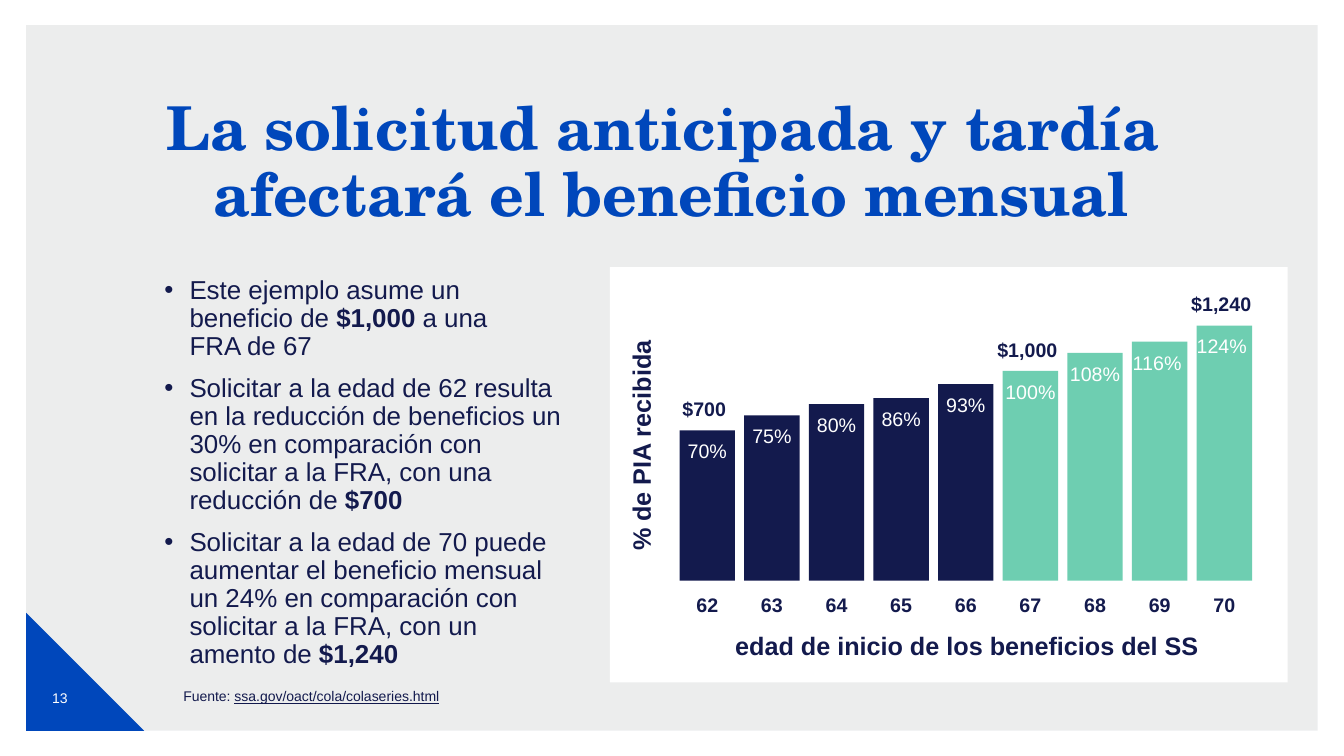
from lxml.etree import SubElement
from pptx import Presentation
from pptx.dml.color import RGBColor
from pptx.enum.shapes import MSO_SHAPE
from pptx.enum.text import MSO_ANCHOR, PP_ALIGN
from pptx.oxml.ns import qn
from pptx.util import Emu, Pt

PX = 9144  # 100 px to the inch
NAVY, BLUE, MINT, WHITE, GREY = "131A4D", "0047BB", "6ECEB1", "FFFFFF", "D0D3D4"
BODY_FONT, TITLE_FONT = "Arial", "TeX Gyre Schola"

# age, percent of the full benefit, bar height in px
BARS = [
    (62, 70, 149), (63, 75, 164), (64, 80, 175), (65, 86, 181), (66, 93, 195),
    (67, 100, 208), (68, 108, 226), (69, 116, 237), (70, 124, 253),
]
FULL_AGE = 67
AMOUNTS = {62: "$700", 67: "$1,000", 70: "$1,240"}

BULLETS = [
    [("Este ejemplo asume un beneficio de ", False), ("$1,000 ", True), ("a una \nFRA de 67", False)],
    [("Solicitar a la edad de 62 resulta en la reducción de beneficios un 30% en "
      "comparación con solicitar a la FRA, con una reducción de ", False), ("$700", True)],
    [("Solicitar a la edad de 70 puede aumentar el beneficio mensual un 24% en "
      "comparación con solicitar a la FRA, con un amento de ", False), ("$1,240", True)],
]


def px(*lengths):
    return [Emu(round(length * PX)) for length in lengths]


def color(value):
    return RGBColor.from_string(value)


def add_block(page, kind, box, fill, opacity=None):
    block = page.shapes.add_shape(kind, *px(*box))
    block.shadow.inherit = False
    block.fill.solid()
    block.fill.fore_color.rgb = color(fill)
    block.line.fill.background()
    if opacity:
        tint = block.fill._xPr.find(qn("a:solidFill"))[0]
        SubElement(tint, qn("a:alpha")).set("val", str(opacity * 1000))


def add_span(para, words, size, shade=NAVY, bold=False, font=BODY_FONT, underline=None):
    """Add the words as a run for each line, with line breaks between."""
    for index, line in enumerate(words.split("\n")):
        if index:
            para.add_line_break()
        span = para.add_run()
        span.text = line
        span.font.size = Pt(size)
        span.font.name = font
        span.font.bold = bold
        span.font.underline = underline
        span.font.color.rgb = color(shade)


def add_frame(page, box, anchor=MSO_ANCHOR.TOP, side=10, edge=5):
    """Add a wrapping text box and return it with its first paragraph."""
    holder = page.shapes.add_textbox(*px(*box))
    frame = holder.text_frame
    frame.word_wrap = True
    frame.vertical_anchor = anchor
    frame.margin_left, frame.margin_right = px(side, side)
    frame.margin_top, frame.margin_bottom = px(edge, edge)
    return holder, frame.paragraphs[0]


def add_label(page, box, words, size, shade=NAVY, bold=True, **frame_options):
    holder, para = add_frame(page, box, **frame_options)
    para.alignment = PP_ALIGN.CENTER
    add_span(para, words, size, shade, bold)
    return holder


def add_backdrop(page, box):
    left, top, width, height = box
    corner = 117
    bottom = top + height
    add_block(page, MSO_SHAPE.RECTANGLE, box, GREY, opacity=40)
    add_block(page, MSO_SHAPE.RIGHT_TRIANGLE, (left, bottom - corner, corner, corner), BLUE)
    add_label(page, (left + 6, bottom - 62, 55, 58), "13", 10, WHITE, False, anchor=MSO_ANCHOR.MIDDLE)


def add_title(page, box):
    para = add_frame(page, box, side=0)[1]
    para.alignment = PP_ALIGN.CENTER
    para.line_spacing = 0.9
    add_span(para, "La solicitud anticipada y tardía \nafectará el beneficio mensual",
             43.2, BLUE, True, TITLE_FONT)


def add_bullets(page, box):
    holder, para = add_frame(page, box, side=0)
    for index, spans in enumerate(BULLETS):
        if index:
            para = holder.text_frame.add_paragraph()
        para.line_spacing = 0.9
        para.space_before = Pt(10)
        properties = para._p.get_or_add_pPr()
        properties.set("marL", str(25 * PX))
        properties.set("indent", str(-25 * PX))
        SubElement(properties, qn("a:buFont")).set("typeface", BODY_FONT)
        SubElement(properties, qn("a:buChar")).set("char", "•")
        for words, bold in spans:
            add_span(para, words, 18.5, bold=bold)


def add_bar(page, box, age, percent):
    """Add one bar with its percent inside, its age below and any amount above."""
    left, top, width, height = box
    add_block(page, MSO_SHAPE.RECTANGLE, box, MINT if age >= FULL_AGE else NAVY)
    percent_width = 50 if percent > 110 else width
    add_label(page, (left, top + 8, percent_width, 24), f"{percent}%", 14, WHITE, False,
              anchor=MSO_ANCHOR.BOTTOM, side=0, edge=0)
    add_label(page, (left, top + height + 7, width, 34), str(age), 14)
    if age in AMOUNTS:
        add_label(page, (left + width / 2 - 48, top - 38, 90, 34), AMOUNTS[age], 14)


def add_bar_panel(page, box):
    left, top, width, height = box
    pitch, bar_width = 64.1, 55
    base = top + 311
    add_block(page, MSO_SHAPE.RECTANGLE, box, WHITE)
    for index, (age, percent, bar_height) in enumerate(BARS):
        bar_left = left + 69 + index * pitch
        add_bar(page, (bar_left, base - bar_height, bar_width, bar_height), age, percent)
    add_label(page, (left - 125, top + 157, 311, 40), "% de PIA recibida", 18).rotation = 270
    add_label(page, (left + 70, top + 355, 568, 40), "edad de inicio de los beneficios del SS", 18)


def add_footnote(page, box):
    para = add_frame(page, box)[1]
    add_span(para, "Fuente: ", 10)
    add_span(para, "ssa.gov/oact/cola/colaseries.html", 10, "12194D", underline=True)


def main():
    deck = Presentation()
    deck.slide_width, deck.slide_height = px(1333, 750)
    page = deck.slides.add_slide(deck.slide_layouts[6])
    add_backdrop(page, (26, 25, 1281, 700))
    add_title(page, (163, 93, 1006, 147))
    add_bullets(page, (163, 270, 403, 412))
    add_bar_panel(page, (605, 265, 672, 412))
    add_footnote(page, (172, 677, 1083, 27))
    deck.save("out.pptx")


if __name__ == "__main__":
    main()
